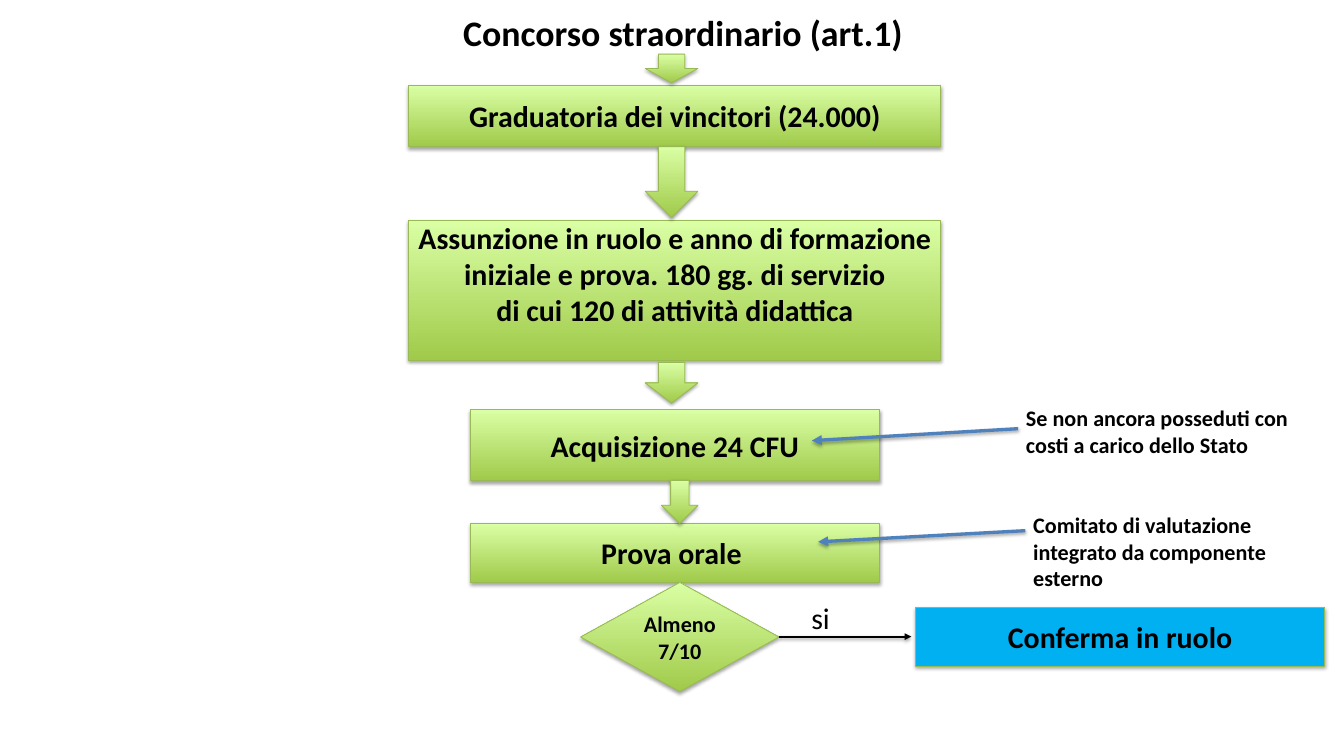
from lxml.etree import SubElement
from pptx import Presentation
from pptx.dml.color import RGBColor
from pptx.enum.shapes import MSO_CONNECTOR, MSO_SHAPE as Shape
from pptx.enum.text import MSO_ANCHOR as Anchor, PP_ALIGN as Align
from pptx.oxml.ns import qn
from pptx.util import Pt

COLORS = {"text": "000000", "green": "A0CA4A", "lime": "DAFFA5", "edge": "98B955",
          "cyan": "00B0F0", "blue": "4F81BD"}
FONT = "Calibri"
SLIDE = (1214.64, 680.4)
STEP_X, ARROW_X, CHECK_X = 609.84, 606.96, 614.4  # centres of the flow columns
WIDE, NARROW = 480.96, 370.08

# centre x, top, width, height, paragraphs
STEPS = [
    (STEP_X, 77.04, WIDE, 55.44, ["Graduatoria dei vincitori (24.000)"]),
    (STEP_X, 199.44, WIDE, 126, [
        "Assunzione in ruolo e anno di formazione iniziale e prova. 180 gg. di servizio",
        "di cui 120 di attività didattica"]),
    (STEP_X, 370.08, NARROW, 64.08, ["Acquisizione 24 CFU"]),
    (STEP_X, 473.04, NARROW, 53.28, ["Prova orale "]),
]
CHECK = (CHECK_X, 526.32, 179.28, 98.64, ["Almeno 7/10"])
OUTCOME = (1012.32, 548.64, NARROW, 53.28, ["Conferma in ruolo"])
# centre x, top, width, height
ARROWS = [
    (ARROW_X, 48.96, 47.52, 25.92),
    (ARROW_X, 132.48, 47.52, 64.08),
    (ARROW_X, 327.6, 47.52, 36.72),
    (CHECK_X, 434.16, 33.12, 38.88),
]
# text, (left, top, width, height), format
TITLE = ("Concorso straordinario (art.1)", (37.44, 9.36, 1159.92, 39.6),
         {"size": Pt(32.4), "bold": True})
NOTES = [
    ("Se non ancora posseduti con costi a carico dello Stato",
     (920.16, 362.16, 264.24, 55.44), {"size": Pt(20), "bold": True}),
    ("Comitato di valutazione integrato da componente esterno",
     (926.64, 458.64, 247.68, 79.92), {"size": Pt(20), "bold": True}),
]
YES = ("si", (704.16, 538.56, 74.88, 40.32), {"size": Pt(27), "bold": False})
# start, end, colour, width
LINKS = [
    ((920.16, 387.36), (733.68, 398.16), "blue", 3),
    ((926.64, 479.52), (739.44, 489.6), "blue", 3),
    ((704.16, 575.28), (823.68, 575.28), "text", 2),
]


def rgb(name):
    return RGBColor.from_string(COLORS[name])


def add_shadow(part):
    effects = SubElement(part._element.spPr, qn("a:effectLst"))
    shadow = SubElement(effects, qn("a:outerShdw"), blurRad=str(Pt(3.1)), dist=str(Pt(1.8)),
                        dir="5400000", rotWithShape="0")
    color = SubElement(shadow, qn("a:srgbClr"), val=COLORS["text"])
    SubElement(color, qn("a:alpha"), val="35000")


def write(frame, paragraphs, style, align=Align.CENTER, anchor=Anchor.MIDDLE):
    frame.word_wrap = True
    frame.vertical_anchor = anchor
    for number, words in enumerate(paragraphs):
        paragraph = frame.paragraphs[0] if number == 0 else frame.add_paragraph()
        paragraph.alignment = align
        run = paragraph.add_run()
        run.text = words
        for key, value in {"name": FONT, **style}.items():
            setattr(run.font, key, value)
        run.font.color.rgb = rgb("text")


def add_block(slide, preset, center, top, width, height, paragraphs=(), size=27, solid=None):
    block = slide.shapes.add_shape(preset, Pt(center - width / 2), Pt(top), Pt(width), Pt(height))
    if solid:
        block.fill.solid()
        block.fill.fore_color.rgb = rgb(solid)
    else:
        block.fill.gradient()
        block.fill.gradient_angle = 90
        for stop, name in zip(block.fill.gradient_stops, ("green", "lime")):
            stop.color.rgb = rgb(name)
    block.line.color.rgb = rgb("edge")
    block.line.width = Pt(0.75)
    add_shadow(block)
    write(block.text_frame, paragraphs, {"size": Pt(size), "bold": True})
    return block


def add_label(slide, words, area, style, align=Align.LEFT, anchor=Anchor.TOP):
    label = slide.shapes.add_textbox(*map(Pt, area))
    write(label.text_frame, [words], style, align, anchor)


def add_link(slide, start, end, color, width):
    link = slide.shapes.add_connector(MSO_CONNECTOR.STRAIGHT, *map(Pt, start + end))
    link.line.color.rgb = rgb(color)
    link.line.width = Pt(width)
    SubElement(link.line._get_or_add_ln(), qn("a:tailEnd"), type="triangle")
    add_shadow(link)


def main():
    deck = Presentation()
    deck.slide_width, deck.slide_height = map(Pt, SLIDE)
    slide = deck.slides.add_slide(deck.slide_layouts[6])

    add_label(slide, *TITLE, align=Align.CENTER, anchor=Anchor.MIDDLE)
    steps = [add_block(slide, Shape.RECTANGLE, *step) for step in STEPS]
    hiring = steps[1].text_frame
    hiring.margin_top, hiring.margin_bottom = Pt(0), Pt(30)
    for arrow in ARROWS:
        add_block(slide, Shape.DOWN_ARROW, *arrow)
    add_block(slide, Shape.DIAMOND, *CHECK, size=20)
    add_block(slide, Shape.RECTANGLE, *OUTCOME, solid="cyan")
    for note in NOTES:
        add_label(slide, *note)
    add_label(slide, *YES, align=Align.CENTER)
    for link in LINKS:
        add_link(slide, *link)

    deck.save("out.pptx")


if __name__ == "__main__":
    main()
